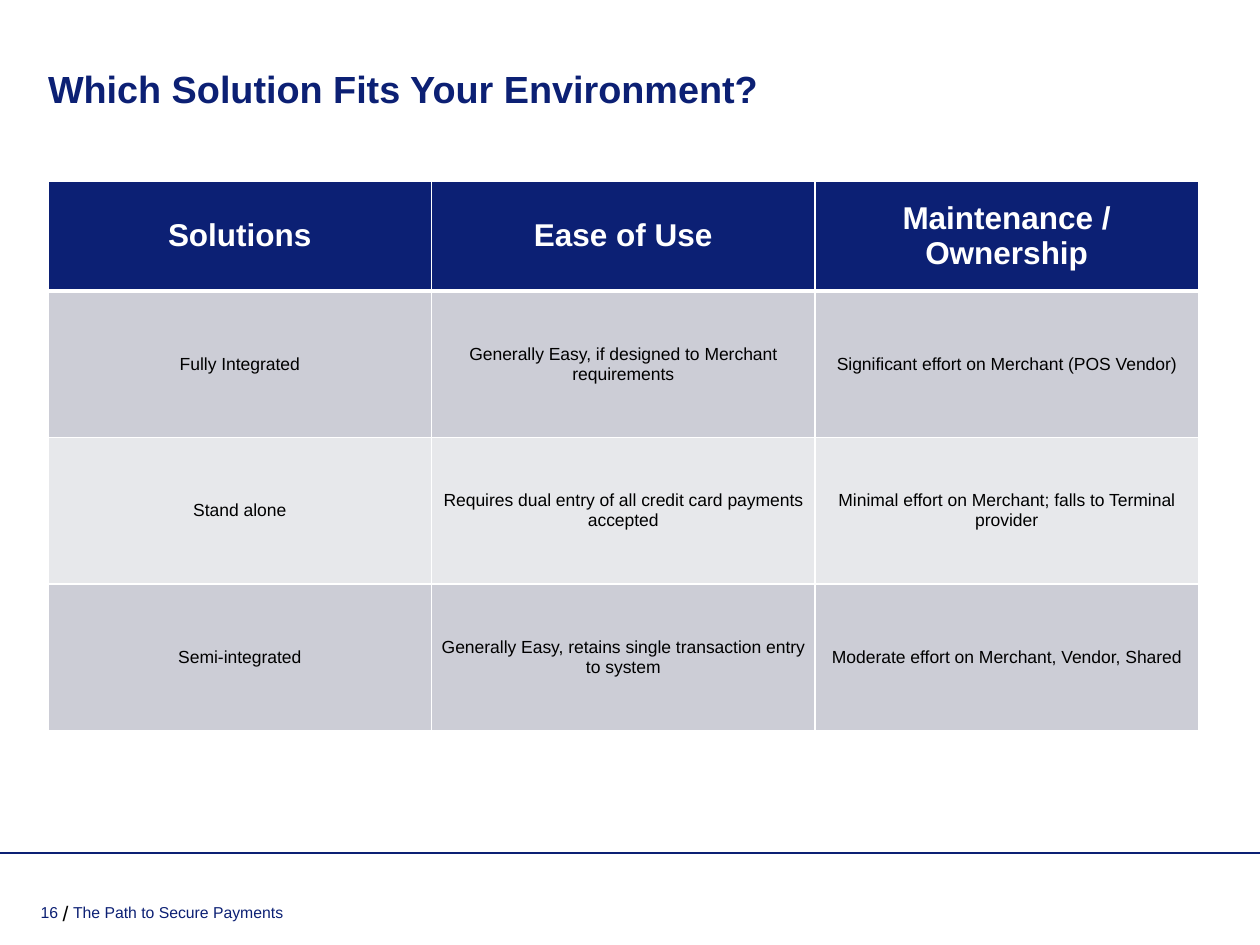
from pptx import Presentation
from pptx.dml.color import RGBColor
from pptx.enum.shapes import MSO_CONNECTOR as Link
from pptx.enum.text import MSO_ANCHOR as Anchor, PP_ALIGN as Align
from pptx.oxml.ns import qn
from pptx.util import Emu, Pt
from lxml.etree import SubElement

NAVY = RGBColor(0x0C, 0x20, 0x74)
WHITE = RGBColor(0xFF, 0xFF, 0xFF)
BLACK = RGBColor(0, 0, 0)
DARK = RGBColor(0xCC, 0xCD, 0xD6)
LIGHT = RGBColor(0xE7, 0xE8, 0xEB)
FONT = "Arial"
DPI = 126

ROWS = [
    ("Solutions", "Ease of Use", "Maintenance / Ownership"),
    ("Fully Integrated",
     "Generally Easy, if designed to Merchant requirements",
     "Significant effort on Merchant (POS Vendor)"),
    ("Stand alone",
     "Requires dual entry of all credit card payments accepted",
     "Minimal effort on Merchant; falls to Terminal provider"),
    ("Semi-integrated",
     "Generally Easy, retains single transaction entry to system",
     "Moderate effort on Merchant, Vendor, Shared"),
]


def px(n):
    return Emu(round(n * 914400 / DPI))


def put_text(frame, text, size=9, color=NAVY, bold=False,
             align=Align.LEFT, anchor=Anchor.BOTTOM):
    """Fill a text frame with one formatted paragraph."""
    frame.word_wrap = True
    frame.vertical_anchor = anchor
    frame.margin_left = frame.margin_right = 0
    frame.margin_top = frame.margin_bottom = 0
    para = frame.paragraphs[0]
    para.alignment = align
    run = para.add_run()
    run.text = text
    font = run.font
    font.name, font.size, font.bold = FONT, Pt(size), bold
    font.color.rgb = color


def add_label(slide, box, text, **style):
    label = slide.shapes.add_textbox(*map(px, box))
    put_text(label.text_frame, text, **style)


def add_title(slide, box, text):
    title = slide.shapes.title
    title.left, title.top, title.width, title.height = map(px, box)
    put_text(title.text_frame, text, size=21.6, bold=True)


def add_rule(slide, y, width):
    rule = slide.shapes.add_connector(Link.STRAIGHT, px(width), px(y), 0, px(y))
    rule.line.color.rgb = NAVY
    rule.line.width = Pt(1.5)
    SubElement(rule._element.spPr, qn("a:effectLst"))


def set_edges(cell, top, bottom):
    """Draw white borders; widths are in points."""
    props = cell._tc.get_or_add_tcPr()
    for side, width in (("L", 1), ("R", 1), ("T", top), ("B", bottom)):
        line = SubElement(props, qn(f"a:ln{side}"), w=str(Pt(width)))
        fill = SubElement(line, qn("a:solidFill"))
        SubElement(fill, qn("a:srgbClr"), val=str(WHITE))


def add_grid(slide, left, top, wide, highs):
    count = len(ROWS[0])
    frame = slide.shapes.add_table(len(ROWS), count, px(left), px(top),
                                   px(wide * count), px(sum(highs)))
    table = frame.table
    for col in table.columns:
        col.width = px(wide)
    for i, row in enumerate(ROWS):
        table.rows[i].height = px(highs[i])
        head = i == 0
        fill = NAVY if head else DARK if i % 2 else LIGHT
        for j, text in enumerate(row):
            cell = table.cell(i, j)
            set_edges(cell, 3 if i == 1 else 1, 3 if head else 1)
            cell.fill.solid()
            cell.fill.fore_color.rgb = fill
            put_text(cell.text_frame, text, size=18 if head else 10,
                     color=WHITE if head else BLACK, bold=head,
                     align=Align.CENTER)
            cell.vertical_anchor = Anchor.MIDDLE
            cell.margin_left = cell.margin_right = px(4)
            cell.margin_top = cell.margin_bottom = px(5)


def main():
    deck = Presentation()
    deck.slide_width, deck.slide_height = px(1260), px(945)
    slide = deck.slides.add_slide(deck.slide_layouts[5])

    # Footer rule and separator
    add_rule(slide, 853, 1260)
    add_label(slide, (56, 901, 19, 25), "/", size=12, color=BLACK,
              align=Align.CENTER)

    # Title and comparison table
    add_title(slide, (48, 64, 1150, 47), "Which Solution Fits Your Environment?")
    add_grid(slide, 48, 181, 383.5, [110, 146.5, 146.5, 146.5])

    # Footer text and page number
    add_label(slide, (73, 903, 400, 19), "The Path to Secure Payments")
    add_label(slide, (24, 903, 34, 19), "16", align=Align.RIGHT)

    deck.save("out.pptx")


if __name__ == "__main__":
    main()
